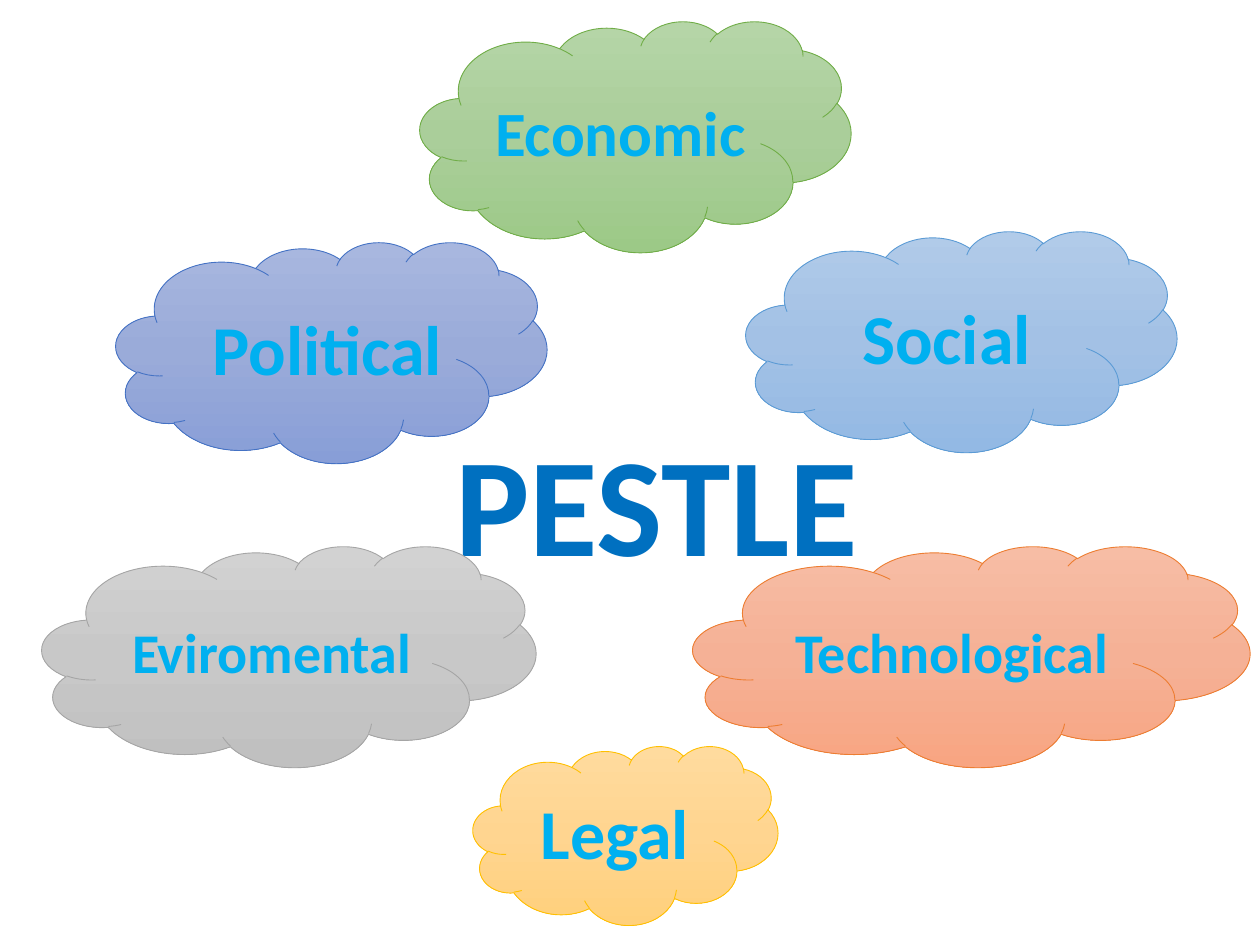
from copy import deepcopy
from pptx import Presentation
from pptx.dml.color import RGBColor
from pptx.enum.shapes import MSO_SHAPE
from pptx.enum.text import MSO_ANCHOR, PP_ALIGN
from pptx.oxml.ns import qn
from pptx.util import Emu, Pt

CLOUD = MSO_SHAPE.CLOUD
MIDDLE = MSO_ANCHOR.MIDDLE
CENTER = PP_ALIGN.CENTER
BLUE = RGBColor(0x00, 0x70, 0xC0)
SKY = RGBColor(0x00, 0xB0, 0xF0)
GRAY = [RGBColor.from_string(c) for c in ("D2D2D2", "C8C8C8", "C0C0C0", "A5A5A5")]
INDIGO = [RGBColor.from_string(c) for c in ("A8B7DF", "9AABD9", "889ED7", "4472C4")]
GREEN = [RGBColor.from_string(c) for c in ("B5D5A7", "AACE9A", "9CC987", "70AD47")]
AZURE = [RGBColor.from_string(c) for c in ("B1CBE9", "A3C1E5", "93B9E4", "5B9BD5")]
ORANGE = [RGBColor.from_string(c) for c in ("F7BDA5", "F5B196", "F8A582", "ED7D31")]
GOLD = [RGBColor.from_string(c) for c in ("FFDB9E", "FFD590", "FFD07C", "FFC000")]


def px(n):
    return Emu(round(n * 914400 / 126))


def write(shape, text, size, color):
    frame = shape.text_frame
    frame.word_wrap = True
    para = frame.paragraphs[0]
    para.alignment = CENTER
    run = para.add_run()
    run.text = text
    style = {"name": "Calibri", "size": Pt(size), "bold": True}
    for key, value in style.items():
        setattr(run.font, key, value)
    run.font.color.rgb = color


deck = Presentation()
deck.slide_width, deck.slide_height = px(1260), px(945)
slide = deck.slides.add_slide(deck.slide_layouts[6])

title = slide.shapes.add_textbox(px(410), px(410), px(494), px(183))
write(title, "PESTLE", 80, BLUE)

clouds = [
    ("Eviromental", 32, (42, 546, 494, 221), GRAY, 13),
    ("Political", 40, (116, 242, 431, 221), INDIGO, 35),
    ("Economic", 36, (420, 21, 431, 231), GREEN, 13),
    ("Social", 40, (746, 231, 431, 221), AZURE, 13),
    ("Technological", 32, (693, 546, 557, 221), ORANGE, 13),
    ("Legal", 40, (473, 746, 305, 179), GOLD, 13),
]
for text, size, box, tones, inset in clouds:
    cloud = slide.shapes.add_shape(CLOUD, *map(px, box))
    cloud.shadow.inherit = False
    cloud.fill.gradient()
    cloud.fill.gradient_angle = 270
    first = next(cloud._element.spPr.iter(qn("a:gs")))
    first.addnext(deepcopy(first))
    for stop, tone, place in zip(cloud.fill.gradient_stops, tones, (0, 0.5, 1)):
        stop.color.rgb = tone
        stop.position = place
    cloud.line.color.rgb = tones[3]
    cloud.line.width = Pt(0.5)
    cloud.text_frame.vertical_anchor = MIDDLE
    cloud.text_frame.margin_left = px(inset)
    write(cloud, text, size, SKY)

deck.save("out.pptx")
